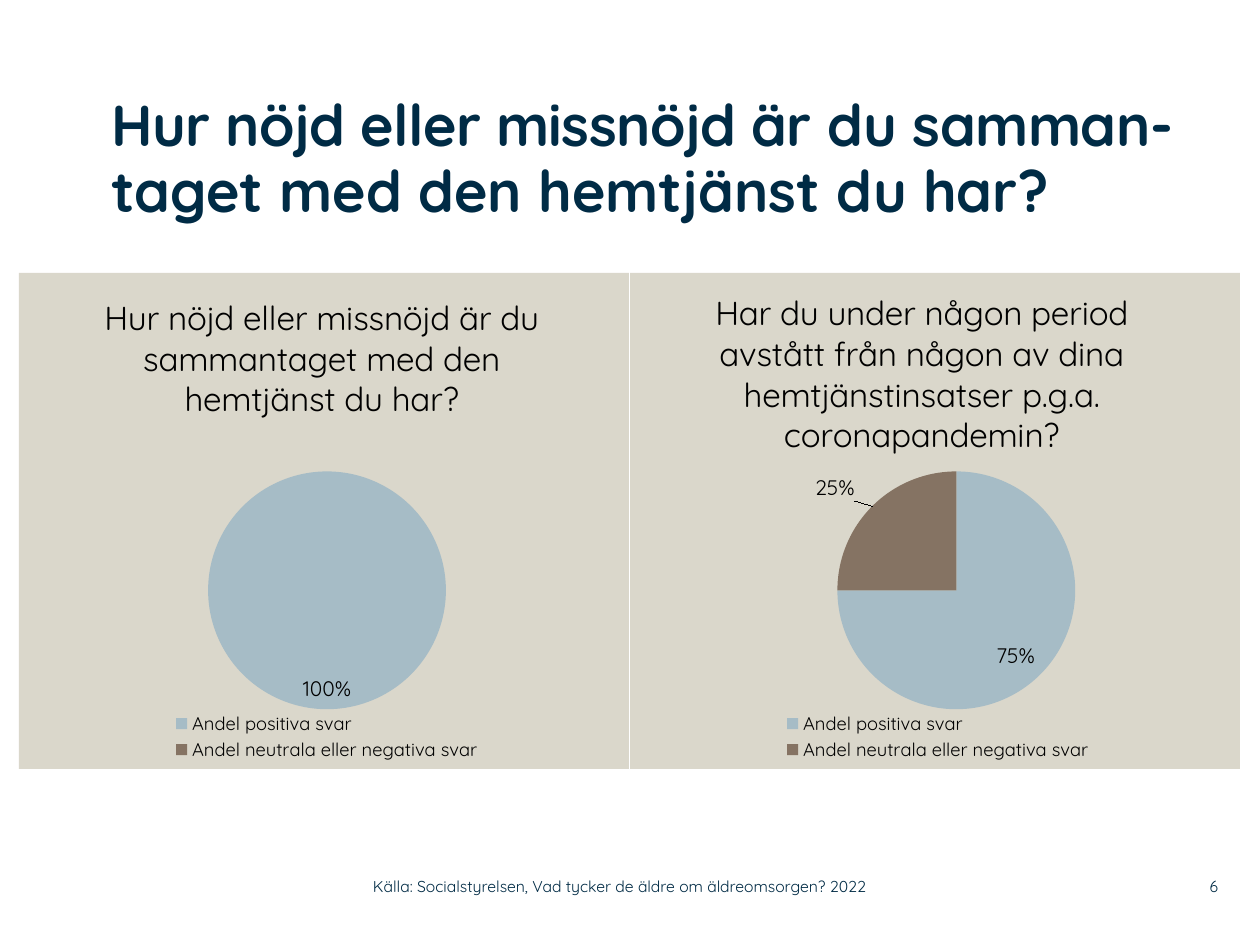
from pptx import Presentation
from pptx.chart.data import CategoryChartData
from pptx.dml.color import RGBColor
from pptx.enum.chart import XL_CHART_TYPE as ChartType
from pptx.enum.chart import XL_LABEL_POSITION as LabelPosition
from pptx.enum.chart import XL_LEGEND_POSITION as LegendPosition
from pptx.enum.text import MSO_ANCHOR as Anchor
from pptx.enum.text import MSO_AUTO_SIZE as AutoSize
from pptx.enum.text import PP_ALIGN as Align
from pptx.oxml import parse_xml
from pptx.oxml.ns import nsdecls, qn
from pptx.util import Emu, Pt

PX_PER_INCH = 126
FONT = "Quicksand"
NAVY = RGBColor(0x00, 0x2B, 0x45)
BLACK = RGBColor(0x00, 0x00, 0x00)
SAND = RGBColor(0xDA, 0xD7, 0xCB)
BLUE = RGBColor(0xA6, 0xBC, 0xC6)
BROWN = RGBColor(0x85, 0x73, 0x63)

CATEGORIES = ["Andel positiva svar", "Andel neutrala eller negativa svar"]
CHART_TOP, CHART_WIDTH, CHART_HEIGHT = 273, 610, 496
FOOTER_TOP, FOOTER_HEIGHT = 868, 37


def px(length):
    return Emu(round(length * 914400 / PX_PER_INCH))


def style_font(font, size, color, bold=False):
    font.name = FONT
    font.size = Pt(size)
    font.bold = bold
    font.color.rgb = color


def add_span(para, text, size, color, bold=False):
    span = para.add_run()
    span.text = text
    style_font(span.font, size, color, bold)
    return span


def prepare_frame(frame, anchor):
    frame.margin_left = frame.margin_right = 0
    frame.margin_top = frame.margin_bottom = 0
    frame.word_wrap = True
    frame.auto_size = AutoSize.NONE
    frame.vertical_anchor = anchor


def fill_title(page):
    title = page.shapes.title
    title.left, title.top = px(111), px(94)
    title.width, title.height = px(1126), px(179)
    prepare_frame(title.text_frame, Anchor.TOP)
    para = title.text_frame.paragraphs[0]
    para.alignment = Align.LEFT
    para.line_spacing = 0.95
    first = add_span(para, "Hur nöjd eller missnöjd är du samman-", 33, NAVY, True)
    first.font._element.set("spc", "-30")
    add_span(para, "taget med den hemtjänst du har?", 33, NAVY, True)


def add_footer(page, left, width, text, align):
    box = page.shapes.add_textbox(px(left), px(FOOTER_TOP), px(width), px(FOOTER_HEIGHT))
    prepare_frame(box.text_frame, Anchor.MIDDLE)
    para = box.text_frame.paragraphs[0]
    para.alignment = align
    add_span(para, text, 9, NAVY)


def set_layout(parent, index, **values):
    """Place a chart part by fractions of the chart; index is the layout's place in parent."""
    for old in parent.findall(qn("c:layout")):
        parent.remove(old)
    items = "".join(f'<c:{name} val="{value}"/>' for name, value in values.items())
    parent.insert(index, parse_xml(
        f'<c:layout {nsdecls("c")}><c:manualLayout>{items}</c:manualLayout></c:layout>'))


def fill_background(chart):
    chart.font._element.getparent()
    text_style = chart._chartSpace.find(qn("c:txPr"))
    text_style.addprevious(parse_xml(
        f'<c:spPr {nsdecls("c", "a")}><a:solidFill><a:srgbClr val="{SAND}"/></a:solidFill>'
        "<a:ln><a:noFill/></a:ln></c:spPr>"))


def label_slices(series):
    labels = series.data_labels
    labels.show_percentage = True
    labels.show_value = False
    labels.number_format, labels.number_format_is_linked = "0%", False
    labels.position = LabelPosition.INSIDE_END
    style_font(labels.font, 12, BLACK)
    if series.values[1] == 0:
        labels._element.insert(0, parse_xml(
            f'<c:dLbl {nsdecls("c")}><c:idx val="1"/><c:delete val="1"/></c:dLbl>'))
        return
    outer = series.points[1].data_label
    outer.position = LabelPosition.OUTSIDE_END
    style_font(outer.font, 12, BLACK)
    element = labels._element.find(qn("c:dLbl"))
    element.find(qn("c:showVal")).set("val", "0")
    element.find(qn("c:showPercent")).set("val", "1")
    set_layout(element, 1, x=-0.02, y=0)


def add_pie(page, left, title, title_at, values, plot_at):
    data = CategoryChartData()
    data.categories = CATEGORIES
    data.add_series("Series 1", values)
    chart = page.shapes.add_chart(ChartType.PIE, px(left), px(CHART_TOP),
                                  px(CHART_WIDTH), px(CHART_HEIGHT), data).chart
    style_font(chart.font, 18, BLACK)
    fill_background(chart)

    chart.has_title = True
    add_span(chart.chart_title.text_frame.paragraphs[0], title, 19, BLACK)
    set_layout(chart.chart_title._element, 1, xMode="edge", yMode="edge",
               x=title_at[0], y=title_at[1])

    chart.has_legend = True
    chart.legend.position = LegendPosition.BOTTOM
    chart.legend.include_in_layout = False
    style_font(chart.legend.font, 10.5, BLACK)
    set_layout(chart.legend._element, 1, xMode="edge", yMode="edge",
               x=0.25, y=0.88, w=0.51, h=0.11)

    x, y, w, h = plot_at
    set_layout(chart._chartSpace.chart.plotArea, 0, layoutTarget="inner",
               xMode="edge", yMode="edge", x=x, y=y, w=w, h=h)
    plot = chart.plots[0]
    plot.vary_by_categories = True
    series = plot.series[0]
    for index, color in enumerate((BLUE, BROWN)):
        fill = series.points[index].format.fill
        fill.solid()
        fill.fore_color.rgb = color
    label_slices(series)


def main():
    deck = Presentation()
    deck.slide_width, deck.slide_height = px(1260), px(945)
    page = deck.slides.add_slide(deck.slide_layouts[5])
    fill_title(page)
    add_pie(page, 630,
            "Har du under någon period avstått från någon av dina "
            "hemtjänstinsatser p.g.a. coronapandemin?",
            (0.13, 0.02), (75, 25), (0.34, 0.4, 0.39, 0.48))
    add_pie(page, 19, "Hur nöjd eller missnöjd är du sammantaget med den hemtjänst du har?",
            (0.13, 0.03), (100, 0), (0.31, 0.4, 0.39, 0.48))
    add_footer(page, 373, 558, "Källa: Socialstyrelsen, Vad tycker de äldre om äldreomsorgen? 2022",
               Align.LEFT)
    add_footer(page, 1159, 59, "6", Align.RIGHT)
    deck.save("out.pptx")


if __name__ == "__main__":
    main()
